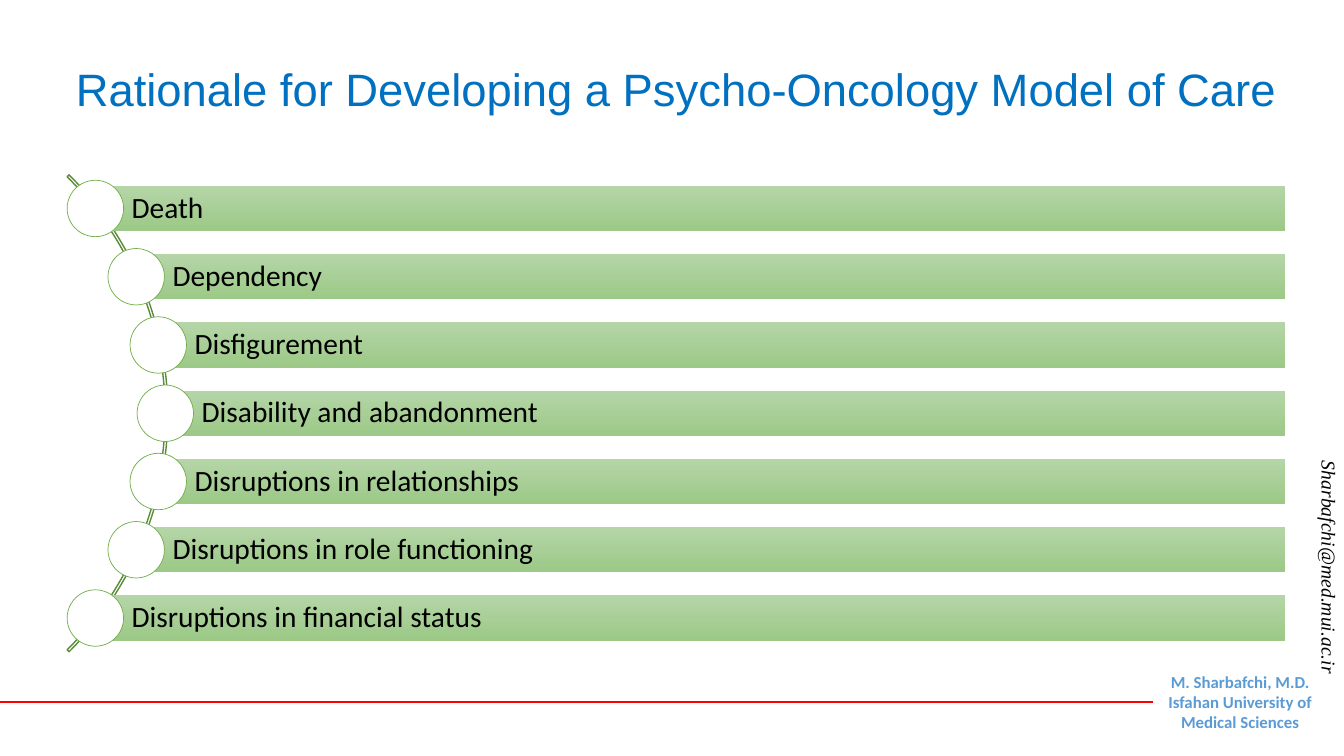
from math import sqrt
from pptx import Presentation
from pptx.util import Inches, Pt
from pptx.dml.color import RGBColor
from pptx.enum.shapes import MSO_SHAPE as Shape, MSO_CONNECTOR as Link
from pptx.enum.text import MSO_ANCHOR as Anchor, PP_ALIGN as Align
from pptx.oxml.ns import qn
from lxml import etree

BLACK = RGBColor(0x00, 0x00, 0x00)
WHITE = RGBColor(0xFF, 0xFF, 0xFF)
RED = RGBColor(0xFF, 0x00, 0x00)
BLUE = RGBColor(0x00, 0x70, 0xC0)
SKY = RGBColor(0x5B, 0x9B, 0xD5)
LEAF = RGBColor(0x70, 0xAD, 0x47)
MOSS = RGBColor(0x5A, 0x8B, 0x39)
PALE = RGBColor(0xB5, 0xD5, 0xA7)
MINT = RGBColor(0x9C, 0xC9, 0x87)

TITLE = "Rationale for Developing a Psycho-Oncology Model of Care"
ITEMS = [
    "Death",
    "Dependency",
    "Disfigurement",
    "Disability and abandonment",
    "Disruptions in relationships",
    "Disruptions in role functioning",
    "Disruptions in financial status",
]
AUTHOR = ["M. Sharbafchi, M.D.", "Isfahan University of Medical Sciences"]
EMAIL = "Sharbafchi@med.mui.ac.ir"


def write(shape, lines, font, size, color, align=Align.LEFT,
          bold=False, italic=False, wrap=True, space=1.0):
    frame = shape.text_frame
    frame.text = "\n".join(lines)
    frame.word_wrap = wrap
    frame.vertical_anchor = Anchor.MIDDLE
    for para in frame.paragraphs:
        para.alignment = align
        para.line_spacing = space
        for run in para.runs:
            run.font.name = font
            run.font.size = Pt(size)
            run.font.color.rgb = color
            run.font.bold = bold
            run.font.italic = italic
    return frame


def add_box(slide, x, y, w, h):
    return slide.shapes.add_textbox(Inches(x), Inches(y), Inches(w), Inches(h))


def add_form(slide, kind, x, y, w, h):
    form = slide.shapes.add_shape(
        kind, Inches(x), Inches(y), Inches(w), Inches(h))
    form.shadow.inherit = False
    return form


def add_title(slide, x, y, w, h):
    write(add_box(slide, x, y, w, h), [TITLE], "Arial", 32.4, BLUE,
          Align.CENTER, space=0.9)


def add_arc(slide, hub, mid, size):
    arc = add_form(slide, Shape.BLOCK_ARC, hub - size / 2, mid - size / 2,
                   size, size)
    for i, value in enumerate([189, 27, 0.004]):
        arc.adjustments[i] = value
    arc.fill.background()
    arc.line.color.rgb = MOSS
    arc.line.width = Pt(1)


def add_item(slide, x, mid, right, text):
    tall, dot = 0.45, 0.56
    bar = add_form(slide, Shape.RECTANGLE, x, mid - tall / 2, right - x, tall)
    bar.fill.gradient()
    bar.fill.gradient_angle = 270
    for stop, color in zip(bar.fill.gradient_stops, [PALE, MINT]):
        stop.color.rgb = color
    bar.line.fill.background()
    frame = write(bar, [text], "Calibri", 21, BLACK, space=0.9)
    frame.margin_left = Inches(0.36)
    frame.margin_top = frame.margin_right = frame.margin_bottom = Inches(0.06)

    knob = add_form(slide, Shape.OVAL, x - dot / 2, mid - dot / 2, dot, dot)
    knob.fill.solid()
    knob.fill.fore_color.rgb = WHITE
    knob.line.color.rgb = LEAF
    knob.line.width = Pt(0.5)


def add_list(slide, x, y, w, h):
    hub, radius = x - 2.35, 3.32
    mid, step = y + h / 2, h / len(ITEMS)
    add_arc(slide, hub, mid, 6.69)
    for i, text in enumerate(ITEMS):
        drop = (i - (len(ITEMS) - 1) / 2) * step
        start = hub + sqrt(radius ** 2 - drop ** 2)
        add_item(slide, start, mid + drop, x + w, text)


def add_footer(slide, x, y, w, h):
    mid, side = y + h / 2, 2.06
    rule = slide.shapes.add_connector(
        Link.STRAIGHT, Inches(x), Inches(mid), Inches(x + 11.44), Inches(mid))
    rule.line.color.rgb = RED
    rule.line.width = Pt(1.5)
    etree.SubElement(rule._element.spPr, qn("a:effectLst"))
    write(add_box(slide, x + w - side, y, side, h), AUTHOR, "Calibri", 12,
          SKY, Align.CENTER, bold=True)


def add_email(slide, x, y, w, h):
    box = add_box(slide, x, y, w, h)
    box.rotation = 90
    write(box, [EMAIL], "Times New Roman", 14, BLACK, italic=True, wrap=False)


def main():
    deck = Presentation()
    deck.slide_width = Inches(13.33)
    deck.slide_height = Inches(7.5)
    slide = deck.slides.add_slide(deck.slide_layouts[6])
    add_footer(slide, 0, 6.76, 13.33, 0.4)
    add_email(slide, 12.02, 5.47, 2.33, 0.34)
    add_title(slide, 0.6, 0.4, 12.21, 1.03)
    add_list(slide, 0.67, 1.73, 12.08, 4.74)
    deck.save("out.pptx")


if __name__ == "__main__":
    main()
